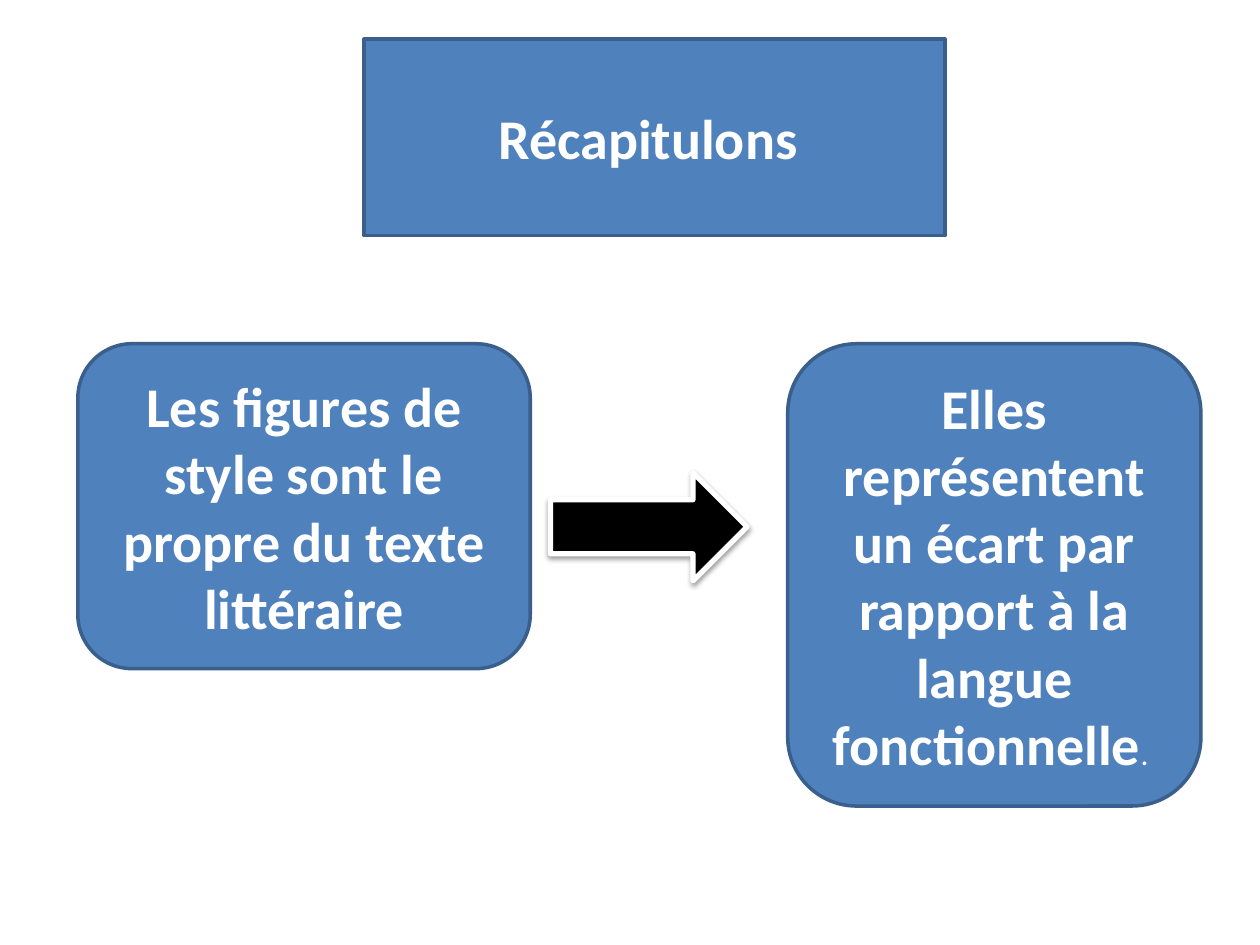
from collections import namedtuple
from dataclasses import dataclass

from lxml.etree import SubElement
from pptx import Presentation
from pptx.dml.color import RGBColor as Rgb
from pptx.enum.shapes import MSO_SHAPE as Kind
from pptx.enum.text import MSO_ANCHOR as Anchor, MSO_AUTO_SIZE as Fit, PP_ALIGN as Align
from pptx.oxml.ns import qn
from pptx.util import Cm, Pt

Box = namedtuple("Box", "x y w h")


@dataclass(frozen=True)
class Theme:
    """Colours, font and type sizes of the slide."""
    fill: str = "4F81BD"
    edge: str = "3A5F8C"
    light: str = "FFFFFF"
    dark: str = "000000"
    font: str = "Calibri"
    big: int = 32
    small: int = 18


THEME = Theme()


def paint(shape, fill, edge, width):
    """Set the fill and outline of a shape."""
    shape.shadow.inherit = False
    shape.fill.solid()
    shape.fill.fore_color.rgb = Rgb.from_string(fill)
    shape.line.color.rgb = Rgb.from_string(edge)
    shape.line.width = Pt(width)


def style(font, size, bold):
    """Set the typeface, size, weight and colour of a font."""
    font.name = THEME.font
    font.size = Pt(size)
    font.bold = bold
    font.color.rgb = Rgb.from_string(THEME.light)


def write(shape, text):
    """Write a bold centred sentence in a shape and return its paragraph."""
    frame = shape.text_frame
    frame.word_wrap = True
    frame.auto_size = Fit.NONE
    frame.vertical_anchor = Anchor.MIDDLE
    para = frame.paragraphs[0]
    para.alignment = Align.CENTER
    para.add_run().text = text
    style(para.font, THEME.big, True)
    return para


def add(slide, kind, box):
    """Add a preset shape that fills a box in centimetres."""
    return slide.shapes.add_shape(kind, *map(Cm, box))


def head(slide, box):
    """Turn the title placeholder into a rounded heading box."""
    title = slide.shapes.title
    title.left, title.top, title.width, title.height = map(Cm, box)
    SubElement(title.element.spPr, qn("a:prstGeom"), prst="roundRect")
    paint(title, THEME.fill, THEME.edge, 2)
    write(title, "Récapitulons ")


def card(slide, box, text):
    """Add a rounded card and return its paragraph."""
    shape = add(slide, Kind.ROUNDED_RECTANGLE, box)
    paint(shape, THEME.fill, THEME.edge, 2)
    return write(shape, text)


def arrow(slide, box):
    """Add a block arrow with a soft shadow below it."""
    shape = add(slide, Kind.RIGHT_ARROW, box)
    paint(shape, THEME.dark, THEME.light, 3)
    effect = shape.element.spPr.find(qn("a:effectLst"))
    shade = SubElement(effect, qn("a:outerShdw"), blurRad=str(Pt(3.1)),
                       dist=str(Pt(1.6)), dir="5400000", rotWithShape="0")
    color = SubElement(shade, qn("a:srgbClr"), val=THEME.dark)
    SubElement(color, qn("a:alpha"), val="38000")


def flow(slide, box):
    """Place two cards at the ends of a box with an arrow between them."""
    wide, slim = 9.12, 8.33
    card(slide, Box(box.x, box.y, wide, 6.55),
         "Les figures de style sont le propre du texte littéraire")
    arrow(slide, Box(box.x + wide + 0.41, box.y + 2.6, 3.96, 2.18))
    para = card(slide, Box(box.x + box.w - slim, box.y, slim, box.h),
                "Elles représentent un écart par rapport à la langue fonctionnelle")
    stop = para.add_run()
    stop.text = ". "
    style(stop.font, THEME.small, False)


def main():
    """Build and save the slide."""
    deck = Presentation()
    deck.slide_width, deck.slide_height = Cm(25.4), Cm(19.05)
    slide = deck.slides.add_slide(deck.slide_layouts.get_by_name("Title Only"))
    head(slide, Box(7.34, 0.79, 11.71, 3.96))
    flow(slide, Box(1.57, 6.93, 22.64, 9.32))
    deck.save("out.pptx")


if __name__ == "__main__":
    main()
